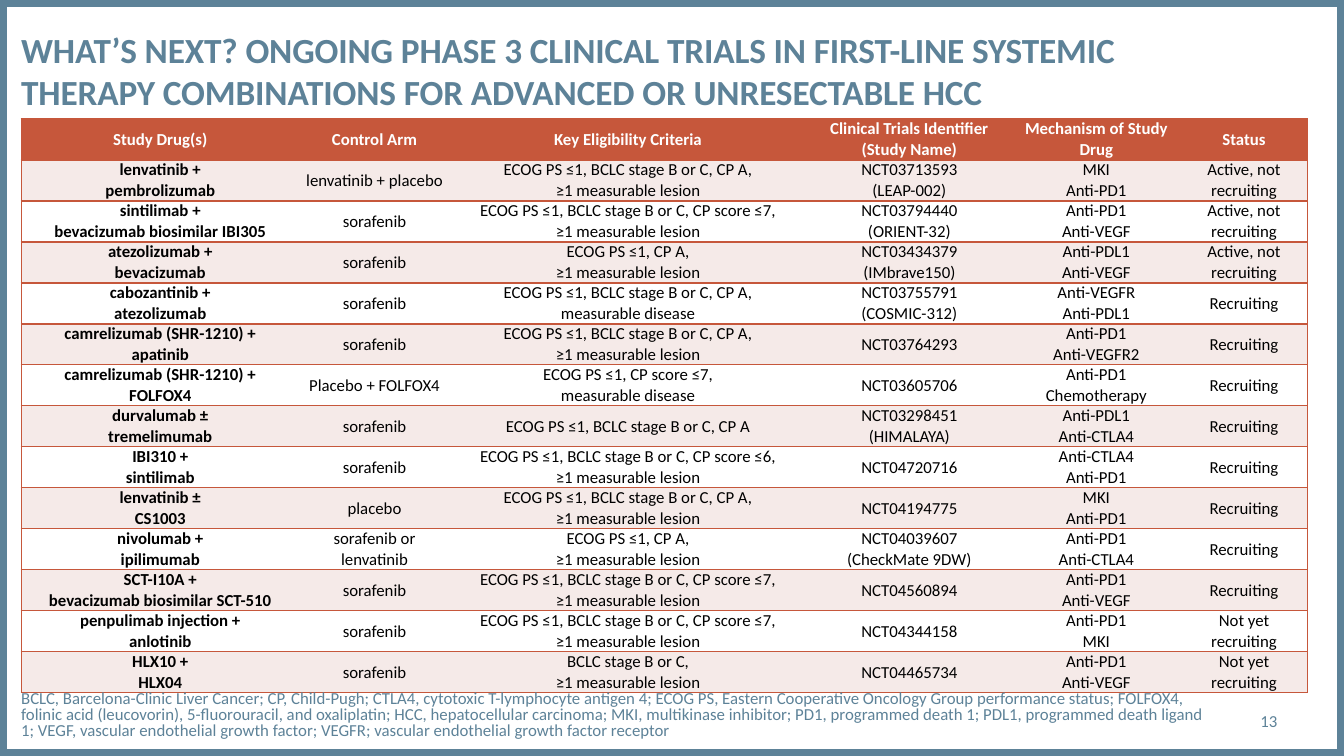
from lxml import etree
from pptx import Presentation
from pptx.dml.color import RGBColor
from pptx.enum.shapes import MSO_SHAPE
from pptx.enum.text import MSO_ANCHOR, MSO_AUTO_SIZE, PP_ALIGN
from pptx.oxml.ns import qn
from pptx.util import Inches, Pt

RECTANGLE = MSO_SHAPE.RECTANGLE
TOP, MIDDLE = MSO_ANCHOR.TOP, MSO_ANCHOR.MIDDLE
LEFT, CENTER, RIGHT = PP_ALIGN.LEFT, PP_ALIGN.CENTER, PP_ALIGN.RIGHT

# Content
TITLE = ("WHAT’S NEXT? ONGOING PHASE 3 CLINICAL TRIALS IN FIRST-LINE "
         "SYSTEMIC THERAPY COMBINATIONS FOR ADVANCED OR UNRESECTABLE HCC")
HEADER = ("Study Drug(s)", "Control Arm", "Key Eligibility Criteria",
          "Clinical Trials Identifier\n(Study Name)", "Mechanism of Study Drug", "Status")
LESION = "\n≥1 measurable lesion"
DISEASE = "\nmeasurable disease"
STAGED = "ECOG PS ≤1, BCLC stage B or C, CP A"
SCORE_7 = "ECOG PS ≤1, BCLC stage B or C, CP score ≤7,"
SCORE_6 = "ECOG PS ≤1, BCLC stage B or C, CP score ≤6,"
UNSTAGED = "ECOG PS ≤1, CP A,"
ACTIVE = "Active, not recruiting"
OPEN = "Recruiting"
PENDING = "Not yet\nrecruiting"
TRIALS = [
    ("lenvatinib +\npembrolizumab", "lenvatinib + placebo", STAGED + "," + LESION,
     "NCT03713593\n(LEAP-002)", "MKI\nAnti-PD1", ACTIVE),
    ("sintilimab +\nbevacizumab biosimilar IBI305", "sorafenib", SCORE_7 + LESION,
     "NCT03794440\n(ORIENT-32)", "Anti-PD1\nAnti-VEGF", ACTIVE),
    ("atezolizumab +\nbevacizumab", "sorafenib", UNSTAGED + LESION,
     "NCT03434379\n(IMbrave150)", "Anti-PDL1\nAnti-VEGF", ACTIVE),
    ("cabozantinib +\natezolizumab", "sorafenib", STAGED + "," + DISEASE,
     "NCT03755791\n(COSMIC-312)", "Anti-VEGFR\nAnti-PDL1", OPEN),
    ("camrelizumab (SHR-1210) +\napatinib", "sorafenib", STAGED + "," + LESION,
     "NCT03764293", "Anti-PD1\nAnti-VEGFR2", OPEN),
    ("camrelizumab (SHR-1210) +\nFOLFOX4", "Placebo + FOLFOX4",
     "ECOG PS ≤1, CP score ≤7," + DISEASE, "NCT03605706", "Anti-PD1\nChemotherapy", OPEN),
    ("durvalumab ±\ntremelimumab", "sorafenib", STAGED,
     "NCT03298451\n(HIMALAYA)", "Anti-PDL1\nAnti-CTLA4", OPEN),
    ("IBI310 +\nsintilimab", "sorafenib", SCORE_6 + LESION,
     "NCT04720716", "Anti-CTLA4\nAnti-PD1", OPEN),
    ("lenvatinib ±\nCS1003", "placebo", STAGED + "," + LESION,
     "NCT04194775", "MKI\nAnti-PD1", OPEN),
    ("nivolumab +\nipilimumab", "sorafenib or\nlenvatinib", UNSTAGED + LESION,
     "NCT04039607\n(CheckMate 9DW)", "Anti-PD1\nAnti-CTLA4", OPEN),
    ("SCT-I10A +\nbevacizumab biosimilar SCT-510", "sorafenib", SCORE_7 + LESION,
     "NCT04560894", "Anti-PD1\nAnti-VEGF", OPEN),
    ("penpulimab injection +\nanlotinib", "sorafenib", SCORE_7 + LESION,
     "NCT04344158", "Anti-PD1\nMKI", PENDING),
    ("HLX10 +\nHLX04", "sorafenib", "BCLC stage B or C," + LESION,
     "NCT04465734", "Anti-PD1\nAnti-VEGF", PENDING),
]
ABBREVIATIONS = (
    "BCLC, Barcelona-Clinic Liver Cancer; CP, Child-Pugh; CTLA4, cytotoxic T-lymphocyte "
    "antigen 4; ECOG PS, Eastern Cooperative Oncology Group performance status; FOLFOX4, "
    "folinic acid (leucovorin), 5-fluorouracil, and oxaliplatin; HCC, hepatocellular "
    "carcinoma; MKI, multikinase inhibitor; PD1, programmed death 1; PDL1, programmed death "
    "ligand 1; VEGF, vascular endothelial growth factor; VEGFR; vascular endothelial growth "
    "factor receptor")
PAGE = "13"

# Design
COLORS = {"slate": "5D8298", "rust": "C6573B", "blush": "F5EAE8",
          "white": "FFFFFF", "black": "000000"}
FONT = "Calibri"
WIDTH, HEIGHT = 13.33, 7.5
MARGIN = 0.21
COLUMNS = (2.76, 1.49, 3.54, 2.04, 1.67, 1.26)
TABLE_TOP, ROW_HEIGHT = 1.18, 0.4
PARAGRAPH_COLUMNS = (0, 3, 4)  # lines here are paragraphs, elsewhere line breaks
PLAIN_TABLE = "{2D5ABB26-0587-4C30-8999-92F81FD0307C}"


def color(name):
    return RGBColor.from_string(COLORS[name])


def write(frame, paragraphs, size, ink, bold=False, align=LEFT):
    """Fill a text frame; each paragraph is a list of lines."""
    for index, lines in enumerate(paragraphs):
        paragraph = frame.add_paragraph() if index else frame.paragraphs[0]
        paragraph.alignment = align
        for number, line in enumerate(lines):
            if number:
                paragraph.add_line_break()
            run = paragraph.add_run()
            run.text = line
            run.font.name, run.font.size, run.font.bold = FONT, Pt(size), bold
            run.font.color.rgb = color(ink)


def clear_margins(frame, anchor):
    frame.margin_left = frame.margin_right = frame.margin_top = frame.margin_bottom = 0
    frame.word_wrap = True
    frame.auto_size = MSO_AUTO_SIZE.NONE
    frame.vertical_anchor = anchor


def add_label(slide, box, text, align=LEFT):
    frame = slide.shapes.add_textbox(*map(Inches, box)).text_frame
    clear_margins(frame, MIDDLE)
    write(frame, [[text]], 12, "slate", align=align)
    return frame.paragraphs[0]


def set_borders(cell, sides):
    properties = cell._tc.get_or_add_tcPr()
    for position, side in enumerate(sides):
        line = etree.Element(qn("a:ln" + side), w=str(Pt(1)))
        fill = etree.SubElement(line, qn("a:solidFill"))
        etree.SubElement(fill, qn("a:srgbClr"), val=COLORS["rust"])
        properties.insert(position, line)


def add_trial_table(slide):
    rows = [HEADER] + TRIALS
    box = (MARGIN, TABLE_TOP, sum(COLUMNS), ROW_HEIGHT * len(rows))
    table = slide.shapes.add_table(len(rows), len(COLUMNS), *map(Inches, box)).table
    table._tbl.tblPr.find(qn("a:tableStyleId")).text = PLAIN_TABLE
    table.horz_banding = False
    for column, width in zip(table.columns, COLUMNS):
        column.width = Inches(width)
    last = len(COLUMNS) - 1
    for r, values in enumerate(rows):
        table.rows[r].height = Inches(ROW_HEIGHT)
        background = "rust" if r == 0 else "blush" if r % 2 else "white"
        for c, value in enumerate(values):
            cell = table.cell(r, c)
            cell.margin_left = cell.margin_right = cell.margin_top = cell.margin_bottom = 0
            cell.vertical_anchor = MIDDLE
            cell.fill.solid()
            cell.fill.fore_color.rgb = color(background)
            lines = value.split("\n")
            paragraphs = [[line] for line in lines] if c in PARAGRAPH_COLUMNS else [lines]
            write(cell.text_frame, paragraphs, 12, "black" if r else "white",
                  bold=r == 0 or c == 0, align=CENTER)
            set_borders(cell, "L" * (c == 0) + "R" * (c == last) + "TB")


def main():
    presentation = Presentation()
    presentation.slide_width, presentation.slide_height = Inches(WIDTH), Inches(HEIGHT)
    slide = presentation.slides.add_slide(presentation.slide_layouts[5])

    # Frame around the slide, behind everything else
    frame = slide.shapes.add_shape(RECTANGLE, 0, 0, Inches(WIDTH), Inches(HEIGHT))
    frame.shadow.inherit = False
    frame.fill.background()
    frame.line.color.rgb = color("slate")
    frame.line.width = Pt(10)
    slide.shapes._spTree.insert(2, frame._element)

    # Title
    title = slide.shapes.title
    title.left, title.top, title.width, title.height = map(Inches, (MARGIN, 0.28, 11.29, 0.94))
    clear_margins(title.text_frame, TOP)
    write(title.text_frame, [[TITLE]], 25.2, "slate", bold=True)
    title.text_frame.paragraphs[0].runs[0].font._element.set("spc", "-10")

    # Page number, trials and abbreviations
    add_label(slide, (11.5, 6.95, 1.17, 0.4), PAGE, RIGHT)
    add_trial_table(slide)
    note = add_label(slide, (MARGIN, 6.9, 11.89, 0.4), ABBREVIATIONS)
    note.line_spacing = 0.8
    note.space_after = Pt(3)

    presentation.save("out.pptx")


if __name__ == "__main__":
    main()
